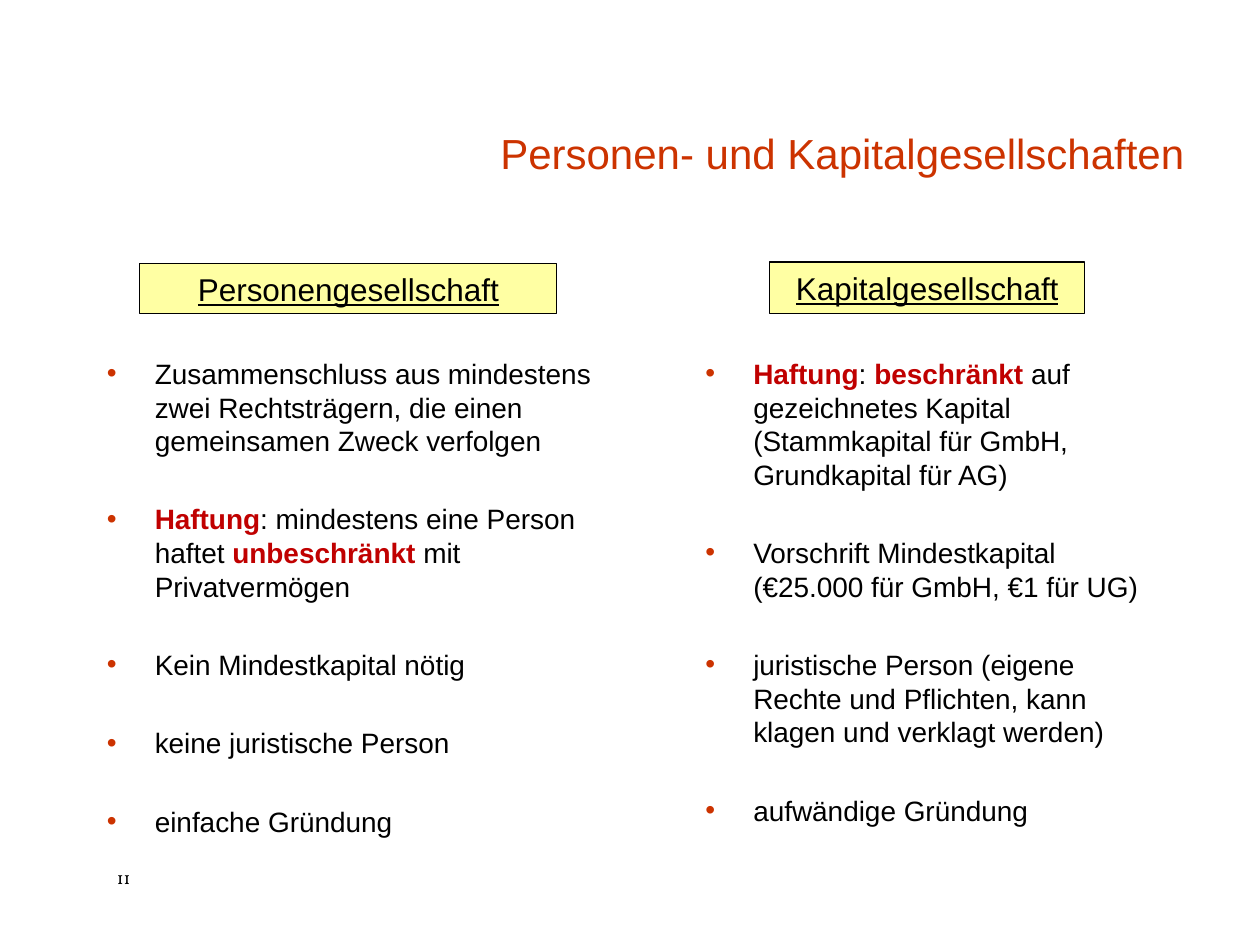
from pptx import Presentation
from pptx.dml.color import RGBColor
from pptx.enum.shapes import MSO_SHAPE
from pptx.enum.text import MSO_ANCHOR, PP_ALIGN
from pptx.oxml.ns import qn
from pptx.util import Inches, Pt
from lxml.etree import SubElement

RED, DARK_RED, YELLOW, BLACK = "CC3300", "C00000", "FFFFA3", "000000"
BODY = {"name": "Arial", "size": Pt(16)}
HEADING = {"name": "Arial", "size": Pt(18), "underline": True}
TITLE = {"name": "Arial", "size": Pt(24), "bold": False}
NUMBER = {"name": "Vollkorn", "size": Pt(10)}

COLUMNS = [
    ("Personengesellschaft", (1.11, 2.09, 3.31, 0.4), (0.75, 2.78, 4.35, 3.31), [
        "Zusammenschluss aus mindestens zwei Rechtsträgern, die einen gemeinsamen Zweck verfolgen",
        "*Haftung*: mindestens eine Person haftet *unbeschränkt* mit Privatvermögen",
        "Kein Mindestkapital nötig",
        "keine juristische Person",
        "einfache Gründung",
    ]),
    ("Kapitalgesellschaft", (6.11, 2.08, 2.5, 0.41), (5.5, 2.78, 3.78, 2.95), [
        "*Haftung*: *beschränkt* auf gezeichnetes Kapital (Stammkapital für GmbH, Grundkapital für AG)",
        "Vorschrift Mindestkapital (€25.000 für GmbH, €1 für UG)",
        "juristische Person (eigene Rechte und Pflichten, kann klagen und verklagt werden)",
        "aufwändige Gründung",
    ]),
]


def set_color(target, color):
    target.rgb = RGBColor.from_string(color)


def set_format(target, values):
    for name, value in values.items():
        setattr(target, name, value)


def inches(box):
    return [Inches(v) for v in box]


def add_run(p, text, font, color):
    r = p.add_run()
    r.text = text
    set_format(r.font, font)
    set_color(r.font.color, color)


def add_bullet(p):
    pPr = p._p.get_or_add_pPr()
    pPr.set("marL", str(Inches(0.38)))
    pPr.set("indent", str(-Inches(0.38)))
    SubElement(SubElement(pPr, qn("a:buClr")), qn("a:srgbClr"), val=RED)
    SubElement(pPr, qn("a:buFont"), typeface="Arial")
    SubElement(pPr, qn("a:buChar"), char="•")


def add_title(s, box, text):
    sp = s.shapes.title
    sp.left, sp.top, sp.width, sp.height = inches(box)
    tf = sp.text_frame
    tf.vertical_anchor = MSO_ANCHOR.BOTTOM
    p = tf.paragraphs[0]
    set_format(p, {"alignment": PP_ALIGN.RIGHT, "line_spacing": 0.9})
    add_run(p, text, TITLE, RED)


def add_heading(s, box, text):
    sp = s.shapes.add_shape(MSO_SHAPE.RECTANGLE, *inches(box))
    sp.shadow.inherit = False
    sp.fill.solid()
    set_color(sp.fill.fore_color, YELLOW)
    set_color(sp.line.color, BLACK)
    sp.line.width = Pt(0.75)
    p = sp.text_frame.paragraphs[0]
    p.alignment = PP_ALIGN.CENTER
    add_run(p, text, HEADING, BLACK)


def add_bullets(s, box, items):
    tf = s.shapes.add_textbox(*inches(box)).text_frame
    tf.word_wrap = True
    for i, item in enumerate(items):
        p = tf.add_paragraph() if i else tf.paragraphs[0]
        add_bullet(p)
        set_format(p, {"line_spacing": Pt(19.2), "space_before": Pt(25.6 if i else 0)})
        for j, text in enumerate(item.split("*")):
            strong = j % 2 == 1
            if text:
                add_run(p, text, {**BODY, "bold": strong}, DARK_RED if strong else BLACK)


def add_page_number(s, box, text):
    tf = s.shapes.add_textbox(*inches(box)).text_frame
    tf.word_wrap = True
    add_run(tf.paragraphs[0], text, NUMBER, BLACK)


def main():
    prs = Presentation()
    prs.slide_width, prs.slide_height = Inches(10), Inches(7.5)
    s = prs.slides.add_slide(prs.slide_layouts[5])
    add_page_number(s, (0.83, 6.83, 0.67, 0.27), "11")
    add_title(s, (2.09, 0.42, 7.41, 1.05), "Personen- und Kapitalgesellschaften")
    for heading, heading_box, list_box, items in COLUMNS:
        add_heading(s, heading_box, heading)
        add_bullets(s, list_box, items)
    prs.save("out.pptx")


if __name__ == "__main__":
    main()
